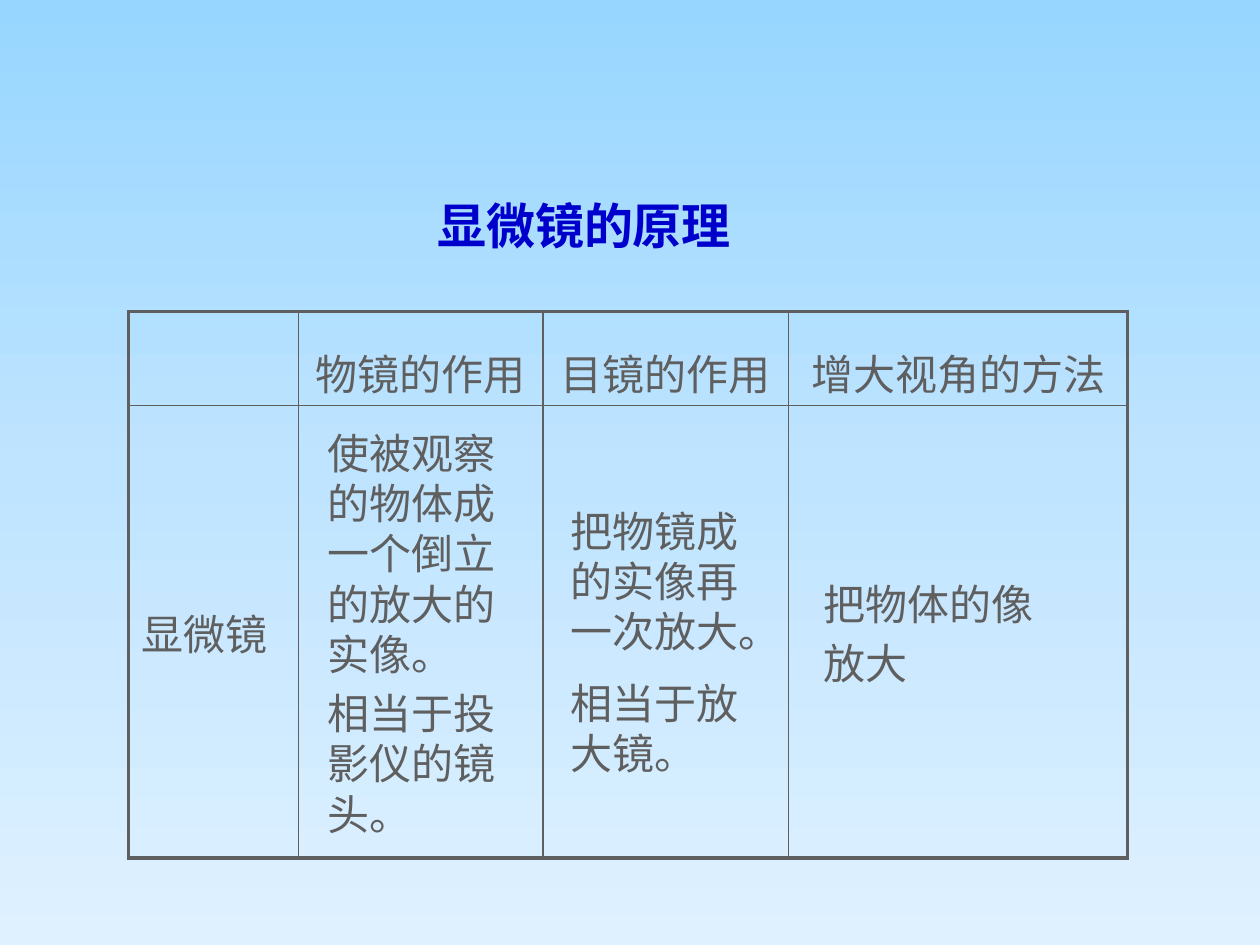
from copy import deepcopy

from lxml import etree
from pptx import Presentation
from pptx import util as u
from pptx.dml.color import RGBColor
from pptx.enum import lang, text
from pptx.oxml.ns import qn

COLORS = {"ink": "5F5F5F", "title": "0000CC",
          "sky": ["97D6FF", "BFE4FF", "DFF1FF"]}
HEADS = ["", "物镜的作用", "目镜的作用", "增大视角的方法"]
COLS = [1.35, 1.94, 1.95, 2.69]
ROWS = [0.75, 3.59]
NOTES = [
    ((2.5, 3.34, 1.75, 3.38), 4.8,
     ["使被观察的物体成一个倒立的放大的实像。", "相当于投影仪的镜头。"]),
    ((4.43, 3.96, 1.77, 2.3), 12,
     ["把物镜成的实像再一次放大。", "相当于放大镜。"]),
    ((6.44, 4.54, 2.29, 0.98), 4.8, ["把物体的像", "放大"]),
]


class Deck:
    def __init__(self):
        self.prs = Presentation()
        self.prs.slide_width = u.Inches(10)
        self.prs.slide_height = u.Inches(7.5)
        self.slide = self.prs.slides.add_slide(self.prs.slide_layouts[5])

    def sky(self, hues):
        """Fill the background with evenly spaced colours, top to bottom."""
        fill = self.slide.background.fill
        fill.gradient()
        fill.gradient_angle = 270
        stops = self.slide.element.find(".//" + qn("a:gsLst"))
        stops.insert(1, deepcopy(stops[0]))
        for i, (stop, hue) in enumerate(zip(fill.gradient_stops, hues)):
            stop.position = i / (len(hues) - 1)
            stop.color.rgb = RGBColor.from_string(hue)

    def put(self, frame, lines, face, size=24, hue="ink", bold=False, **form):
        """Put one paragraph per line; form holds paragraph attributes."""
        for i, line in enumerate(lines):
            para = frame.add_paragraph() if i else frame.paragraphs[0]
            for key, val in form.items():
                setattr(para, key, val)
            run = para.add_run()
            run.text = line
            font = {"name": face, "size": u.Pt(size), "bold": bold,
                    "language_id": lang.MSO_LANGUAGE_ID.SIMPLIFIED_CHINESE}
            for key, val in font.items():
                setattr(run.font, key, val)
            run.font.color.rgb = RGBColor.from_string(COLORS[hue])

    def title(self, line, box):
        shape = self.slide.shapes.title
        for key, val in zip(("left", "top", "width", "height"), box):
            setattr(shape, key, u.Inches(val))
        frame = shape.text_frame
        frame.vertical_anchor = text.MSO_ANCHOR.MIDDLE
        self.put(frame, [line], "Arial", 28, "title", True,
                 line_spacing=1.5, alignment=text.PP_ALIGN.LEFT)

    def note(self, box, gap, lines):
        frame = self.slide.shapes.add_textbox(*map(u.Inches, box)).text_frame
        frame.word_wrap = True
        frame.auto_size = text.MSO_AUTO_SIZE.SHAPE_TO_FIT_TEXT
        self.put(frame, lines, "Times New Roman", space_before=u.Pt(gap))

    def edge(self, cell, widths):
        """Draw cell borders ahead of the fill, as the schema orders them."""
        props = cell._tc.get_or_add_tcPr()
        for i, (side, width) in enumerate(zip("LRTB", widths)):
            line = etree.Element(qn("a:ln" + side), w=str(u.Pt(width)))
            fill = etree.SubElement(line, qn("a:solidFill"))
            etree.SubElement(fill, qn("a:srgbClr"), val=COLORS["ink"])
            props.insert(i, line)

    def table(self, left, top):
        grid = self.slide.shapes.add_table(
            len(ROWS), len(COLS), u.Inches(left), u.Inches(top),
            u.Inches(sum(COLS)), u.Inches(sum(ROWS))).table
        grid.first_row = grid.horz_banding = False
        for col, width in zip(grid.columns, COLS):
            col.width = u.Inches(width)
        for r, height in enumerate(ROWS):
            grid.rows[r].height = u.Inches(height)
            for c in range(len(COLS)):
                cell = grid.cell(r, c)
                cell.fill.background()
                cell.margin_top = cell.margin_bottom = 0
                outer = (c == 0, c == len(COLS) - 1,
                         r == 0, r == len(ROWS) - 1)
                self.edge(cell, [2.25 if out else 1 for out in outer])
        for c, head in enumerate(HEADS):
            if head:
                self.put(grid.cell(0, c).text_frame, [head], "Arial",
                         line_spacing=1.5, alignment=text.PP_ALIGN.CENTER)
        name = grid.cell(1, 0)
        name.vertical_anchor = text.MSO_ANCHOR.MIDDLE
        self.put(name.text_frame, ["显微镜"], "Calibri",
                 space_before=u.Pt(4.8))


def main():
    deck = Deck()
    deck.sky(COLORS["sky"])
    deck.table(1.02, 2.47)
    deck.title("显微镜的原理", (3.37, 1.29, 2.69, 0.76))
    for box, gap, lines in NOTES:
        deck.note(box, gap, lines)
    deck.prs.save("out.pptx")


if __name__ == "__main__":
    main()
